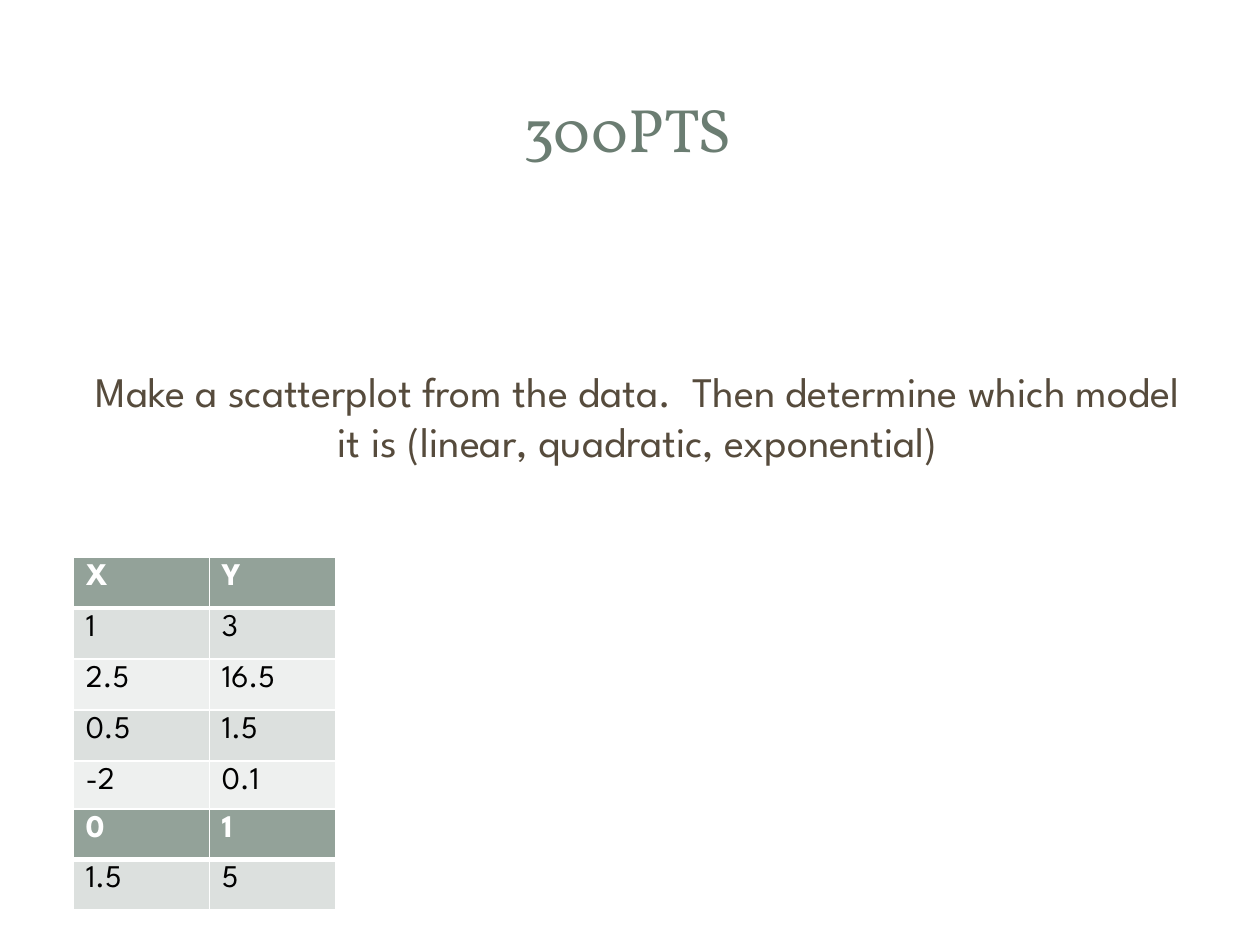
from pptx import Presentation
from pptx.dml.color import RGBColor
from pptx.enum.shapes import MSO_SHAPE
from pptx.enum.text import MSO_ANCHOR, PP_ALIGN
from pptx.oxml import parse_xml
from pptx.oxml.ns import nsdecls
from pptx.util import Pt

CENTER, LEFT = PP_ALIGN.CENTER, PP_ALIGN.LEFT
MIDDLE, TOP = MSO_ANCHOR.MIDDLE, MSO_ANCHOR.TOP
RECTANGLE, ROUNDED = MSO_SHAPE.RECTANGLE, MSO_SHAPE.ROUNDED_RECTANGLE
TITLE_ONLY = 5

TITLE = "300PTS"
QUESTION = ("Make a scatterplot from the data.  Then determine which model "
            "it is (linear, quadratic, exponential)")
TABLES = [
    {"top": 318.2, "row_height": 29.2,
     "rows": [("X", "Y"), ("1", "3"), ("2.5", "16.5"), ("0.5", "1.5"), ("-2", "0.1")]},
    {"top": 462.2, "row_height": 23.4, "rows": [("0", "1"), ("1.5", "5")]},
]
PANELS = [
    (ROUNDED, (7.2, 7.92, 705.6, 532.8)),
    (RECTANGLE, (21.6, 21.6, 676.8, 104.4)),
    (RECTANGLE, (29.5, 29.5, 661, 87.8)),
]
CORNER = 0.02
TABLE_LEFT = 41.8
COLUMN_WIDTHS = (77.8, 72)
HEADER_FILL, BAND_FILLS = "93A299", ("DCE0DE", "EEF0EF")

TITLE_FONT = {"name": "Vollkorn", "size": Pt(35), "bold": False}
BODY_FONT = {"name": "League Spartan", "size": Pt(24), "bold": False}
HEADER_FONT = {"name": "League Spartan", "size": Pt(18), "bold": True}
CELL_FONT = {**HEADER_FONT, "bold": False}


def color(value):
    return RGBColor.from_string(value)


def assign(target, values):
    for name, value in values.items():
        setattr(target, name, value)


def write(frame, text, font, ink, align):
    para = frame.paragraphs[0]
    para.alignment = align
    span = para.add_run()
    span.text = text
    assign(span.font, font)
    span.font.color.rgb = color(ink)


def place(shape, left, top, width, height):
    assign(shape, {"left": Pt(left), "top": Pt(top),
                   "width": Pt(width), "height": Pt(height)})


def add_panel(slide, kind, bounds):
    panel = slide.shapes.add_shape(kind, *map(Pt, bounds))
    panel.shadow.inherit = False
    panel.fill.solid()
    panel.fill.fore_color.rgb = color("FFFFFF")
    panel.line.fill.background()
    if kind == ROUNDED:
        panel.adjustments[0] = CORNER
    return panel


def add_borders(cell, bottom_width):
    properties = cell._tc.get_or_add_tcPr()
    widths = {"lnL": 1, "lnR": 1, "lnT": 1, "lnB": bottom_width}
    for index, (side, width) in enumerate(widths.items()):
        properties.insert(index, parse_xml(
            f'<a:{side} {nsdecls("a")} w="{Pt(width)}"><a:solidFill>'
            f'<a:srgbClr val="FFFFFF"/></a:solidFill></a:{side}>'))


def add_data_table(slide, top, row_height, rows):
    frame = slide.shapes.add_table(
        len(rows), len(COLUMN_WIDTHS), Pt(TABLE_LEFT), Pt(top),
        Pt(sum(COLUMN_WIDTHS)), Pt(row_height * len(rows)))
    table = frame.table
    for column, width in zip(table.columns, COLUMN_WIDTHS):
        column.width = Pt(width)
    for row_index, values in enumerate(rows):
        table.rows[row_index].height = Pt(row_height)
        header = row_index == 0
        fill = HEADER_FILL if header else BAND_FILLS[(row_index - 1) % 2]
        for column_index, value in enumerate(values):
            cell = table.cell(row_index, column_index)
            assign(cell, {"margin_left": Pt(7.2), "margin_right": Pt(7.2),
                          "margin_top": Pt(3.6), "margin_bottom": Pt(3.6),
                          "vertical_anchor": TOP})
            cell.fill.solid()
            cell.fill.fore_color.rgb = color(fill)
            write(cell.text_frame, value, HEADER_FONT if header else CELL_FONT,
                  "FFFFFF" if header else "000000", LEFT)
            add_borders(cell, 3 if header else 1)


def main():
    """Build the scatterplot question slide."""
    deck = Presentation()
    assign(deck, {"slide_width": Pt(720), "slide_height": Pt(540)})
    slide = deck.slides.add_slide(deck.slide_layouts[TITLE_ONLY])

    title = slide.shapes.title
    for kind, bounds in PANELS:
        title._element.addprevious(add_panel(slide, kind, bounds)._element)
    place(title, 33.5, 32, 650.2, 82.1)
    title.text_frame.vertical_anchor = MIDDLE
    write(title.text_frame, TITLE, TITLE_FONT, "6B7D72", CENTER)

    box = slide.shapes.add_textbox(Pt(36), Pt(138.2), Pt(648), Pt(344.2))
    assign(box.text_frame, {"word_wrap": True, "margin_left": Pt(15.84),
                            "margin_top": Pt(70.6)})
    write(box.text_frame, QUESTION, BODY_FONT, "564B3C", CENTER)

    for data in TABLES:
        add_data_table(slide, **data)
    deck.save("out.pptx")


if __name__ == "__main__":
    main()
